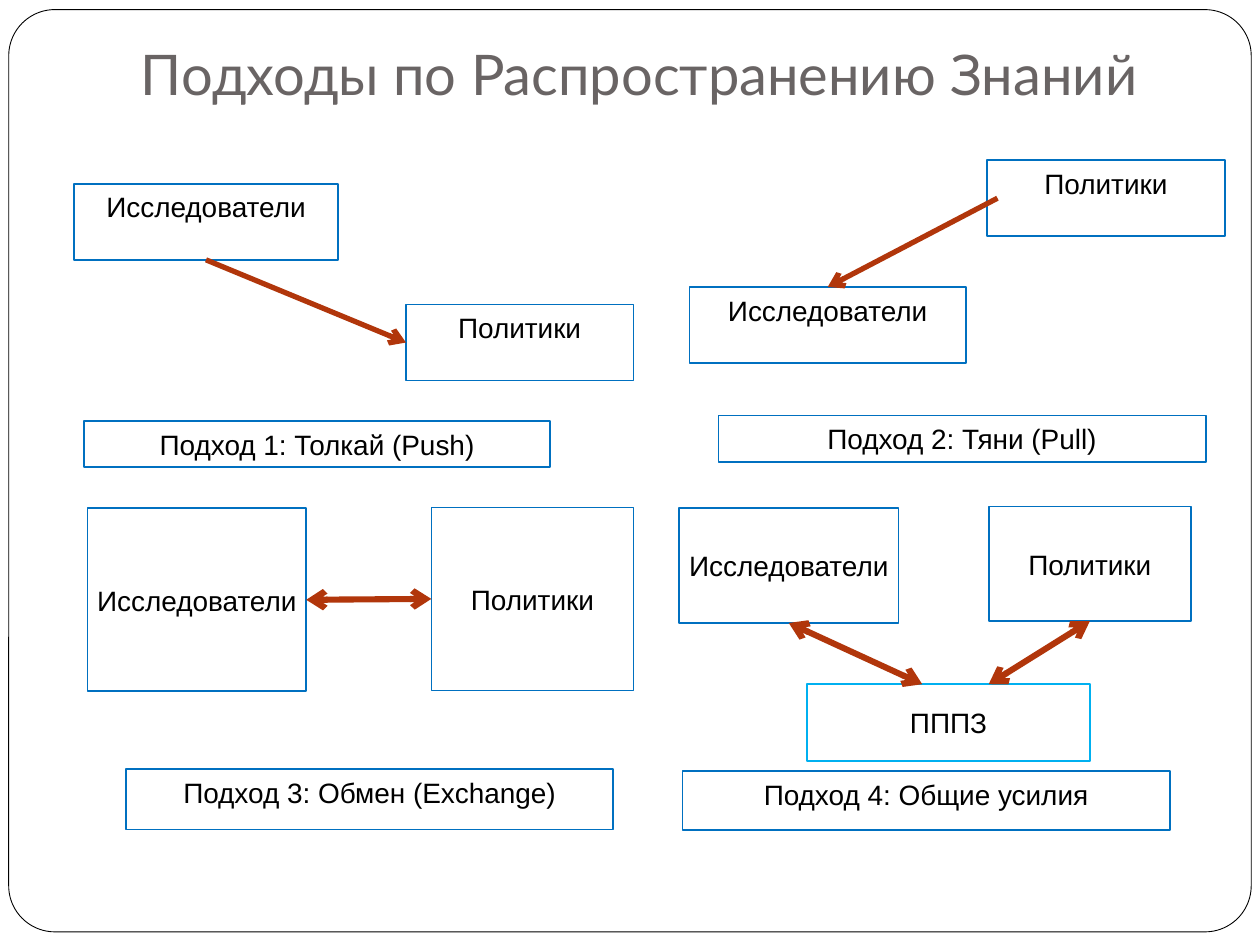
from lxml.etree import SubElement
from pptx import Presentation
from pptx.dml.color import RGBColor
from pptx.enum.shapes import MSO_CONNECTOR as Connector, MSO_SHAPE as Shape
from pptx.enum.text import MSO_ANCHOR as Anchor, MSO_AUTO_SIZE as AutoSize, PP_ALIGN as Align
from pptx.oxml.ns import qn
from pptx.util import Pt

COLORS = {
    "paper": "FFFFFF",
    "frame": "000000",
    "title": "696464",
    "text": "000000",
    "box": "0070C0",
    "platform": "00B0F0",
    "arrow": "B1360B",
}
RESEARCHERS = "Исследователи"
POLICY = "Политики"


def color(name):
    return RGBColor.from_string(COLORS[name])


def edge(box, side):
    across, down = {"top": (0.5, 0), "left": (0, 0.5), "bottom": (0.5, 1), "right": (1, 0.5)}[side]
    return box.left + int(box.width * across), box.top + int(box.height * down)


class SlideBuilder:
    def __init__(self, slide):
        self.slide = slide
        self.shapes = slide.shapes

    def label(self, shape, text, size, font, tint, anchor, inset):
        frame = shape.text_frame
        frame.text = text
        frame.word_wrap = True
        frame.auto_size = AutoSize.NONE
        frame.vertical_anchor = anchor
        frame.margin_left = frame.margin_right = Pt(inset)
        frame.margin_top = frame.margin_bottom = Pt(inset)
        para = frame.paragraphs[0]
        para.alignment = Align.CENTER
        span = para.runs[0]
        span.font.size = Pt(size)
        span.font.name = font
        span.font.color.rgb = color(tint)

    def title(self, text, left, top, width, height):
        title = self.shapes.title
        title.left, title.top, title.width, title.height = map(Pt, (left, top, width, height))
        self.label(title, text, 32, "Lato", "title", Anchor.MIDDLE, 0)

    def frame(self, left, top, width, height):
        frame = self.shapes.add_shape(Shape.ROUNDED_RECTANGLE, *map(Pt, (left, top, width, height)))
        frame.adjustments[0] = 0.05
        frame.shadow.inherit = False
        frame.fill.solid()
        frame.fill.fore_color.rgb = color("paper")
        frame.line.color.rgb = color("frame")
        frame.line.width = Pt(0.5)
        self.shapes._spTree.insert(2, frame._element)

    def box(self, text, left, top, width, height, anchor=Anchor.TOP, line="box"):
        box = self.shapes.add_shape(Shape.RECTANGLE, *map(Pt, (left, top, width, height)))
        box.shadow.inherit = False
        box.fill.background()
        box.line.color.rgb = color(line)
        box.line.width = Pt(1)
        self.label(box, text, 16, "Arial", "text", anchor, 3.6)
        return box

    def arrow(self, begin, end, weight=3, both=False):
        arrow = self.shapes.add_connector(Connector.STRAIGHT, *begin, *end)
        arrow.line.color.rgb = color("arrow")
        arrow.line.width = Pt(weight)
        line = arrow.line._get_or_add_ln()
        for tip in ("a:headEnd", "a:tailEnd") if both else ("a:tailEnd",):
            SubElement(line, qn(tip), type="arrow")
        SubElement(arrow._element.spPr, qn("a:effectLst"))


def main():
    deck = Presentation()
    deck.slide_width, deck.slide_height = Pt(720), Pt(540)
    page = SlideBuilder(deck.slides.add_slide(deck.slide_layouts[5]))
    page.frame(5, 5.5, 710, 527)
    page.title("Подходы по Распространению Знаний", 31, 22.5, 669, 39)

    researchers = page.box(RESEARCHERS, 42.5, 105, 150.5, 43.5)
    policy = page.box(POLICY, 232, 174, 130, 43.5)
    page.box("Подход 1: Толкай (Push)", 48, 240.5, 266.5, 26.5)
    page.arrow(edge(researchers, "bottom"), edge(policy, "left"))

    researchers = page.box(RESEARCHERS, 394, 164, 158, 43.5)
    policy = page.box(POLICY, 564, 91.5, 136, 43.5)
    page.box("Подход 2: Тяни (Pull)", 410.5, 237.5, 278.5, 26.5)
    page.arrow((Pt(570), edge(policy, "left")[1]), edge(researchers, "top"))

    researchers = page.box(RESEARCHERS, 50, 290.5, 125, 104.5, Anchor.MIDDLE)
    policy = page.box(POLICY, 246.5, 290, 115.5, 104.5, Anchor.MIDDLE)
    page.box("Подход 3: Обмен (Exchange)", 72, 439.5, 278.5, 34.5)
    page.arrow(edge(researchers, "right"), edge(policy, "left"), 3.5, True)

    researchers = page.box(RESEARCHERS, 388, 290.5, 125.5, 65.5, Anchor.MIDDLE)
    policy = page.box(POLICY, 565, 289.5, 115.5, 65.5, Anchor.MIDDLE)
    platform = page.box("ПППЗ", 461, 391, 162, 44, Anchor.MIDDLE, "platform")
    page.box("Подход 4: Общие усилия", 390, 440.5, 278.5, 34)
    for partner, landing in ((researchers, 527), (policy, 565)):
        page.arrow(edge(partner, "bottom"), (Pt(landing), platform.top), 3.5, True)

    deck.save("out.pptx")


if __name__ == "__main__":
    main()
